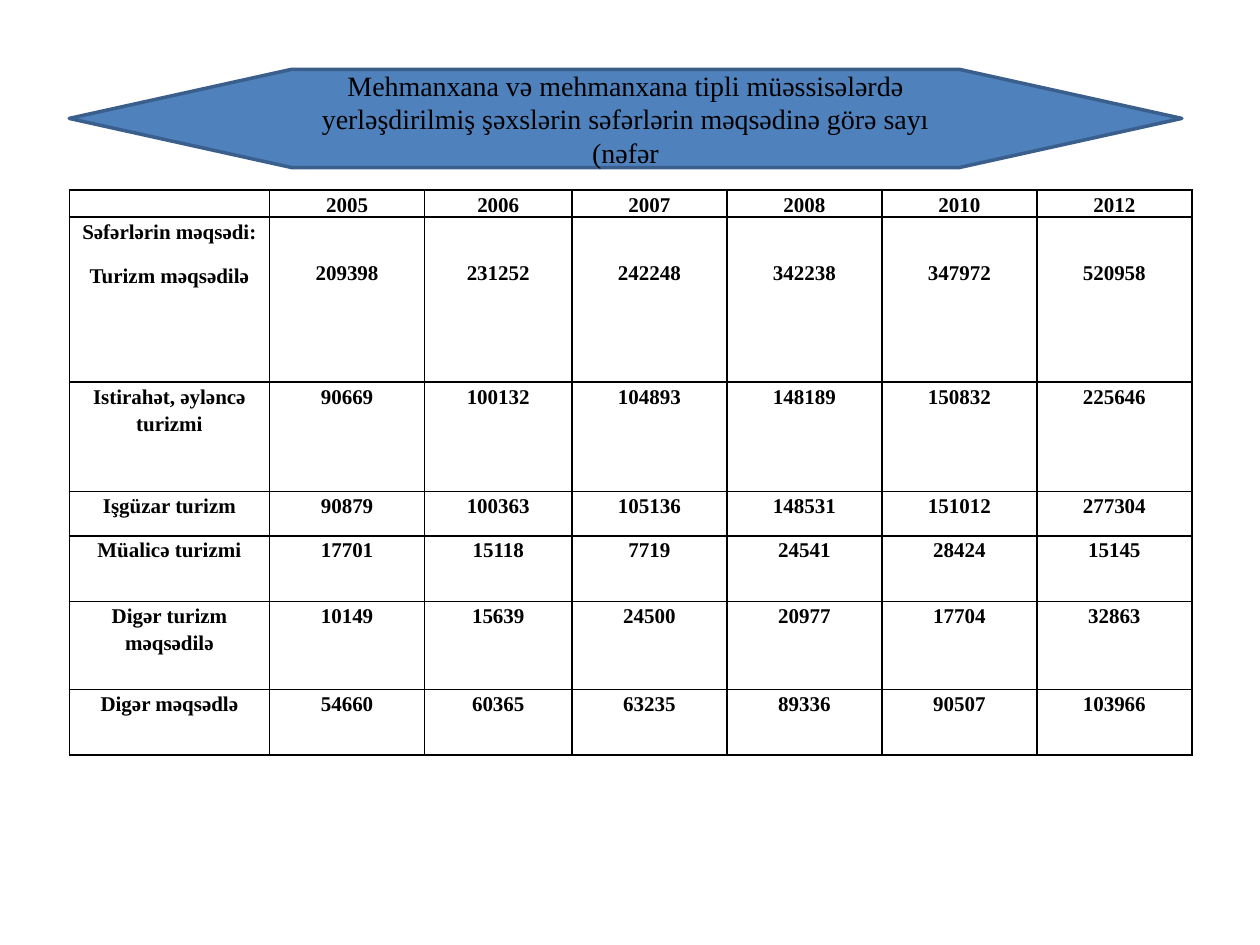
from pptx import Presentation
from pptx.dml.color import RGBColor
from pptx.enum.shapes import MSO_SHAPE
from pptx.enum.text import MSO_ANCHOR, PP_ALIGN
from pptx.oxml.ns import qn
from pptx.util import Inches, Pt
from lxml.etree import SubElement

COLORS = {"text": "000000", "border": "000000", "banner": "4F81BD", "banner_line": "3A5F8C"}
FONT = "Times New Roman"
TITLE = ("Mеhmаnхаnа və mеhmаnхаnа tipli müəssisələrdə yеrləşdirilmiş şəхslərin "
         "səfərlərin məqsədinə görə sаyı (nəfər")
COL_WIDTHS = [1.59, 1.23, 1.17, 1.23, 1.23, 1.23, 1.23]
ROW_HEIGHTS = [0.17, 1.31, 0.87, 0.35, 0.52, 0.7, 0.52]
ROWS = [
    ["", "2005", "2006", "2007", "2008", "2010", "2012"],
    ["Səfərlərin məqsədi:\nTurizm məqsədilə",
     "209398", "231252", "242248", "342238", "347972", "520958"],
    ["Istirаhət, əyləncə turizmi",
     "90669", "100132", "104893", "148189", "150832", "225646"],
    ["Işgüzаr turizm", "90879", "100363", "105136", "148531", "151012", "277304"],
    ["Müаlicə turizmi", "17701", "15118", "7719", "24541", "28424", "15145"],
    ["Digər turizm məqsədilə", "10149", "15639", "24500", "20977", "17704", "32863"],
    ["Digər məqsədlə", "54660", "60365", "63235", "89336", "90507", "103966"],
]
PURPOSE_ROW = 1


def rgb(name):
    return RGBColor.from_string(COLORS[name])


def write_text(tf, text, size=12, bold=False, line_spacing=None, space_after=None):
    for i, line in enumerate(text.split("\n")):
        p = tf.paragraphs[0] if i == 0 else tf.add_paragraph()
        p.alignment = PP_ALIGN.CENTER
        p.line_spacing = line_spacing
        p.space_after = space_after
        if not line:
            p._p.get_or_add_endParaRPr().set("sz", str(size * 100))
            continue
        r = p.add_run()
        r.text = line
        r.font.name = FONT
        r.font.size = Pt(size)
        r.font.bold = bold
        r.font.color.rgb = rgb("text")


def set_borders(cell):
    tc_pr = cell._tc.get_or_add_tcPr()
    for i, side in enumerate(("lnL", "lnR", "lnT", "lnB")):
        ln = tc_pr.makeelement(qn(f"a:{side}"), {"w": str(Pt(1))})
        fill = SubElement(ln, qn("a:solidFill"))
        SubElement(fill, qn("a:srgbClr"), val=COLORS["border"])
        tc_pr.insert(i, ln)


def add_banner(s):
    sp = s.shapes.add_shape(MSO_SHAPE.FLOWCHART_PREPARATION,
                            Inches(0.55), Inches(0.55), Inches(8.83), Inches(0.78))
    sp.shadow.inherit = False
    sp.fill.solid()
    sp.fill.fore_color.rgb = rgb("banner")
    sp.line.color.rgb = rgb("banner_line")
    sp.line.width = Pt(2)
    tf = sp.text_frame
    tf.word_wrap = True
    tf.vertical_anchor = MSO_ANCHOR.MIDDLE
    write_text(tf, TITLE, size=16)


def add_visitor_table(s):
    table = s.shapes.add_table(len(ROWS), len(COL_WIDTHS), Inches(0.55), Inches(1.51),
                               Inches(sum(COL_WIDTHS)), Inches(sum(ROW_HEIGHTS))).table
    table.first_row = False
    table.horz_banding = False
    for column, width in zip(table.columns, COL_WIDTHS):
        column.width = Inches(width)
    for i, (values, height) in enumerate(zip(ROWS, ROW_HEIGHTS)):
        table.rows[i].height = Inches(height)
        for j, value in enumerate(values):
            cell = table.cell(i, j)
            cell.fill.background()
            cell.margin_left = cell.margin_right = Inches(0.05)
            cell.margin_top = Inches(0.33 if i == PURPOSE_ROW and j else 0)
            cell.margin_bottom = 0
            set_borders(cell)
            write_text(cell.text_frame, value, bold=True, line_spacing=1.15,
                       space_after=Pt(10))


def main():
    prs = Presentation()
    prs.slide_width, prs.slide_height = Inches(10), Inches(7.5)
    s = prs.slides.add_slide(prs.slide_layouts[6])
    add_visitor_table(s)
    add_banner(s)
    prs.save("out.pptx")


if __name__ == "__main__":
    main()
